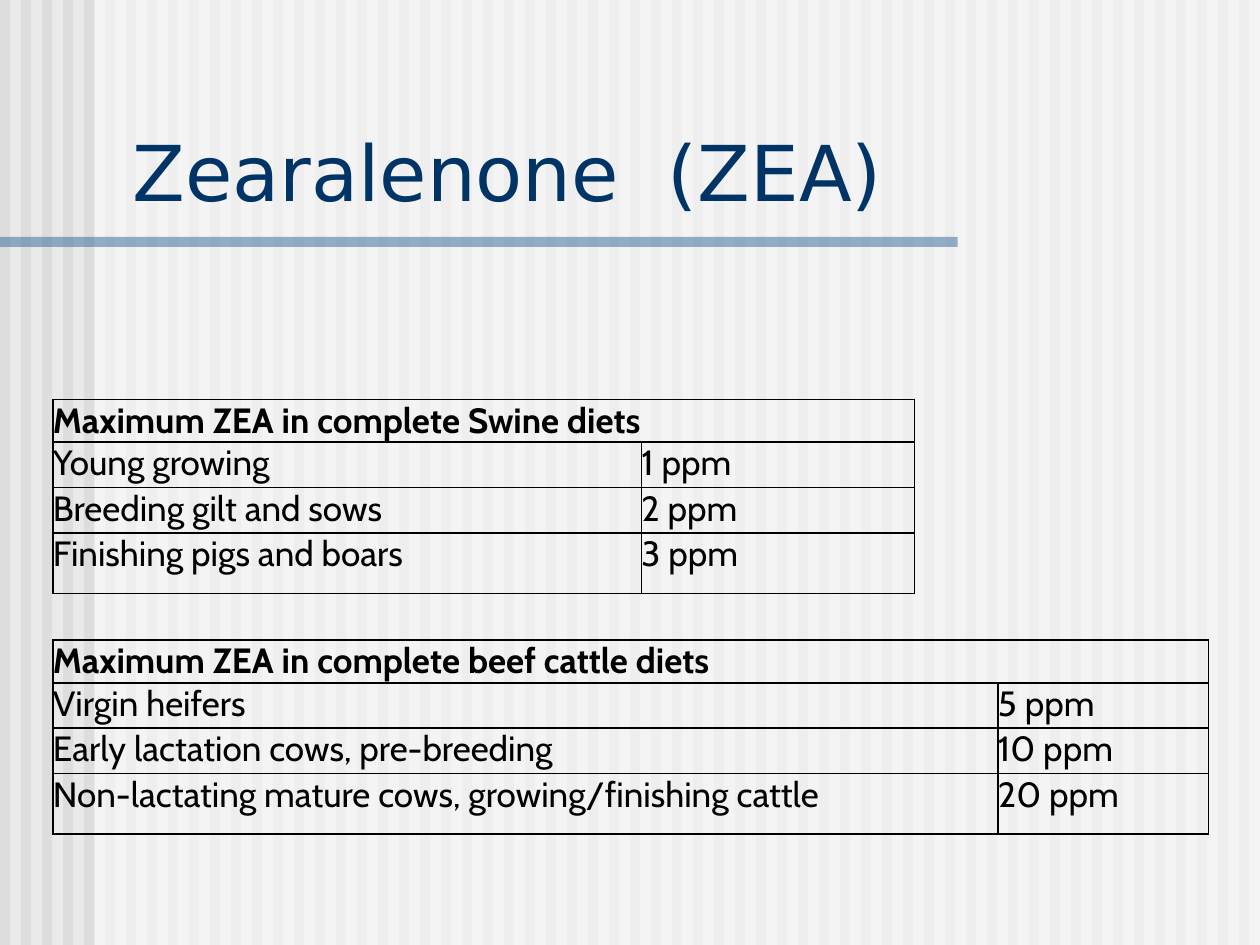
"""Build the slide on zearalenone limits in swine and beef cattle diets."""
from dataclasses import dataclass

from lxml import etree
from pptx import Presentation
from pptx.dml.color import RGBColor
from pptx.enum.shapes import MSO_SHAPE
from pptx.enum.text import MSO_ANCHOR, PP_ALIGN
from pptx.oxml.ns import qn
from pptx.util import Inches, Pt

RECTANGLE = MSO_SHAPE.RECTANGLE
LEFT = PP_ALIGN.LEFT
BOTTOM, TOP = MSO_ANCHOR.BOTTOM, MSO_ANCHOR.TOP


@dataclass(frozen=True)
class Theme:
    background: str = "EAEAEA"
    stripe: str = "DDDDDD"
    veil: str = "FFFFFF"
    rule: str = "336699"
    title: str = "003366"
    ink: str = "000000"
    title_font: str = "DejaVu Sans"
    body_font: str = "Cabin"
    title_size: int = 44
    body_size: int = 20
    border: int = 1


THEME = Theme()
WIDTH, HEIGHT = 10, 7.5
STRIPE_COUNT = 60
TITLE = "Zearalenone  (ZEA)"
ROW_HEIGHTS = (0.33, 0.36, 0.36, 0.48)
TABLE_LEFT = 0.42
TABLES = [
    {
        "top": 3.17,
        "columns": (4.67, 2.17),
        "heading": "Maximum ZEA in complete Swine diets",
        "limits": [
            ("Young growing", "1 ppm"),
            ("Breeding gilt and sows", "2 ppm"),
            ("Finishing pigs and boars", "3 ppm"),
        ],
    },
    {
        "top": 5.08,
        "columns": (7.5, 1.67),
        "heading": "Maximum ZEA in complete beef cattle diets",
        "limits": [
            ("Virgin heifers", "5 ppm"),
            ("Early lactation cows, pre-breeding", "10 ppm"),
            ("Non-lactating mature cows, growing/finishing cattle", "20 ppm"),
        ],
    },
]


def write(frame, text, *, font, size, color, bold=False):
    para = frame.paragraphs[0]
    para.alignment = LEFT
    span = para.add_run()
    span.text = text
    span.font.name = font
    span.font.size = Pt(size)
    span.font.bold = bold
    span.font.color.rgb = RGBColor.from_string(color)


def add_bar(page, left, top, width, height, color, opacity=100):
    bar = page.shapes.add_shape(
        RECTANGLE, Inches(left), Inches(top), Inches(width), Inches(height))
    bar.shadow.inherit = False
    bar.line.fill.background()
    bar.fill.solid()
    bar.fill.fore_color.rgb = RGBColor.from_string(color)
    if opacity < 100:
        tint = bar.element.find(".//" + qn("a:srgbClr"))
        etree.SubElement(tint, qn("a:alpha"), val=str(opacity * 1000))


def add_backdrop(page):
    page.background.fill.solid()
    page.background.fill.fore_color.rgb = RGBColor.from_string(THEME.background)
    for index in range(STRIPE_COUNT):
        add_bar(page, index * WIDTH / STRIPE_COUNT, 0, 0.08, HEIGHT, THEME.stripe)
    add_bar(page, 0.75, 0, WIDTH - 0.75, HEIGHT, THEME.veil, opacity=50)
    add_bar(page, 0, 1.88, 7.6, 0.08, THEME.rule, opacity=50)


def add_title(page):
    title = page.shapes.title
    title.element.getparent().append(title.element)
    title.left, title.top = Inches(0.95), Inches(0.93)
    title.width, title.height = Inches(8.93), Inches(0.84)
    title.text_frame.vertical_anchor = BOTTOM
    write(title.text_frame, TITLE, font=THEME.title_font,
          size=THEME.title_size, color=THEME.title)


def format_cell(cell):
    cell.margin_left = cell.margin_right = 0
    cell.margin_top = cell.margin_bottom = 0
    cell.vertical_anchor = TOP
    properties = cell._tc.get_or_add_tcPr()
    for side in ("lnL", "lnR", "lnT", "lnB"):
        line = etree.SubElement(
            properties, qn("a:" + side), w=str(Pt(THEME.border)))
        fill = etree.SubElement(line, qn("a:solidFill"))
        etree.SubElement(fill, qn("a:srgbClr"), val=THEME.ink)
    cell.fill.background()


def add_limits(page, top, columns, heading, limits):
    table = page.shapes.add_table(
        len(ROW_HEIGHTS), len(columns), Inches(TABLE_LEFT), Inches(top),
        Inches(sum(columns)), Inches(sum(ROW_HEIGHTS))).table
    table.first_row = table.horz_banding = False
    for column, width in zip(table.columns, columns):
        column.width = Inches(width)
    for row, height in zip(table.rows, ROW_HEIGHTS):
        row.height = Inches(height)
    table.cell(0, 0).merge(table.cell(0, len(columns) - 1))
    for cell in table.iter_cells():
        format_cell(cell)
    for row, texts in enumerate([(heading,), *limits]):
        for column, text in enumerate(texts):
            write(table.cell(row, column).text_frame, text,
                  font=THEME.body_font, size=THEME.body_size,
                  color=THEME.ink, bold=row == 0)


def main():
    deck = Presentation()
    deck.slide_width, deck.slide_height = Inches(WIDTH), Inches(HEIGHT)
    page = deck.slides.add_slide(deck.slide_layouts.get_by_name("Title Only"))
    add_backdrop(page)
    add_title(page)
    for table in TABLES:
        add_limits(page, **table)
    deck.save("out.pptx")


if __name__ == "__main__":
    main()
